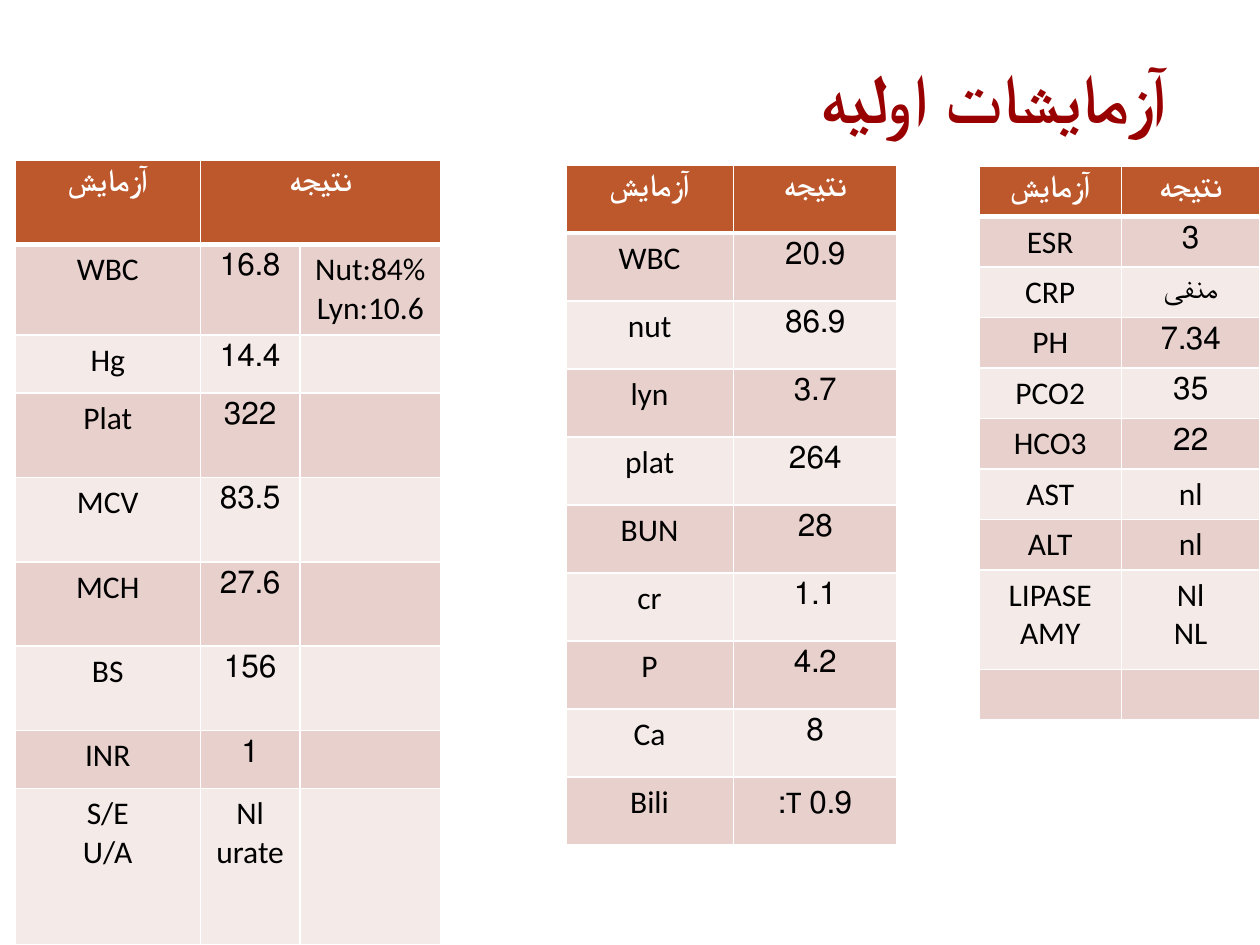
from dataclasses import dataclass

from pptx import Presentation
from pptx import util as u
from pptx.dml.color import RGBColor
from pptx.enum import text
from pptx.oxml import parse_xml
from pptx.oxml.ns import nsdecls


@dataclass(frozen=True)
class Theme:
    title: str = "990000"
    head: str = "BD582C"
    bands: tuple = ("E8D1CD", "F4EAE8")
    white: str = "FFFFFF"
    black: str = "000000"
    serif: str = "Times New Roman"
    sans: str = "Calibri"
    large: float = 39.6
    body: float = 18


THEME = Theme()
HEADS = ("آزمایش", "نتیجه")
BLOOD = [
    ("WBC", "20.9"), ("nut", "86.9"), ("lyn", "3.7"),
    ("plat", "264"), ("BUN", "28"), ("cr", "1.1"),
    ("P", "4.2"), ("Ca", "8"), ("Bili", "0.9 T:"),
]
COUNT = [
    ("WBC", "16.8", "Nut:84%\nLyn:10.6"), ("Hg", "14.4"), ("Plat", "322"),
    ("MCV", "83.5"), ("MCH", "27.6"), ("BS", "156"), ("INR", "1"),
    ("S/E\nU/A", "Nl\nurate"),
]
GASES = [
    ("ESR", "3"), ("CRP", "منفی"), ("PH", "7.34"), ("PCO2", "35"),
    ("HCO3", "22"), ("AST", "nl"), ("ALT", "nl"),
    ("LIPASE\nAMY", "Nl\nNL"), (),
]


def write(frame, words, *, size=THEME.body, face=THEME.sans, color=THEME.black,
          bold=False, align=text.PP_ALIGN.CENTER, lead=None, track=None):
    for num, line in enumerate(words.split("\n")):
        para = frame.paragraphs[0] if num == 0 else frame.add_paragraph()
        para.alignment = align
        para.line_spacing = lead
        para._p.get_or_add_pPr().set("rtl", "1")
        run = para.add_run()
        run.text = line
        font = run.font
        font.size = u.Pt(size)
        font.name = face
        font.bold = bold
        font.color.rgb = RGBColor.from_string(color)
        if track is not None:
            run._r.get_or_add_rPr().set("spc", str(int(track * 100)))


def edge(cell, row):
    widths = {"lnL": 1, "lnR": 1, "lnT": 3 if row == 1 else 1,
              "lnB": 3 if row == 0 else 1}
    props = cell._tc.get_or_add_tcPr()
    for tag, width in widths.items():
        props.append(parse_xml(
            f'<a:{tag} {nsdecls("a")} w="{u.Pt(width)}"><a:solidFill>'
            f'<a:srgbClr val="{THEME.white}"/></a:solidFill></a:{tag}>'))


def paint(cell, row):
    edge(cell, row)
    color = THEME.bands[(row - 1) % 2] if row else THEME.head
    cell.fill.solid()
    cell.fill.fore_color.rgb = RGBColor.from_string(color)


def add_grid(slide, left, top, cols, rows, data):
    grid = slide.shapes.add_table(
        len(rows), len(cols), u.Inches(left), u.Inches(top),
        u.Inches(sum(cols)), u.Inches(sum(rows))).table
    for col, width in zip(grid.columns, cols):
        col.width = u.Inches(width)
    for row, height in zip(grid.rows, rows):
        row.height = u.Inches(height)
    if len(cols) > len(HEADS):
        grid.cell(0, 1).merge(grid.cell(0, len(cols) - 1))
    for row, words in enumerate([HEADS, *data]):
        for col in range(len(cols)):
            cell = grid.cell(row, col)
            paint(cell, row)
            if col < len(words):
                color = THEME.black if row else THEME.white
                write(cell.text_frame, words[col], color=color, bold=row == 0)


def add_title(slide):
    box = slide.shapes.add_textbox(
        u.Inches(1.11), u.Inches(0.31), u.Inches(8.25), u.Inches(1))
    frame = box.text_frame
    frame.word_wrap = True
    frame.vertical_anchor = text.MSO_ANCHOR.MIDDLE
    write(frame, "آزمایشات اولیه", size=THEME.large, face=THEME.serif,
          color=THEME.title, bold=True, align=text.PP_ALIGN.RIGHT,
          lead=0.85, track=-0.5)


def main():
    deck = Presentation()
    deck.slide_width = u.Inches(10)
    deck.slide_height = u.Inches(7.5)
    slide = deck.slides.add_slide(deck.slide_layouts[6])
    add_title(slide)
    add_grid(slide, 4.49, 1.31, [1.33, 1.3], [0.54] * 10, BLOOD)
    add_grid(slide, 0.12, 1.27, [1.47, 0.79, 1.12],
             [0.67, 0.72, 0.46, *[0.67] * 4, 0.46, 1.24], COUNT)
    add_grid(slide, 7.77, 1.32, [1.13, 1.1],
             [0.34, *[0.4] * 7, 0.79, 0.4], GASES)
    deck.save("out.pptx")


if __name__ == "__main__":
    main()
